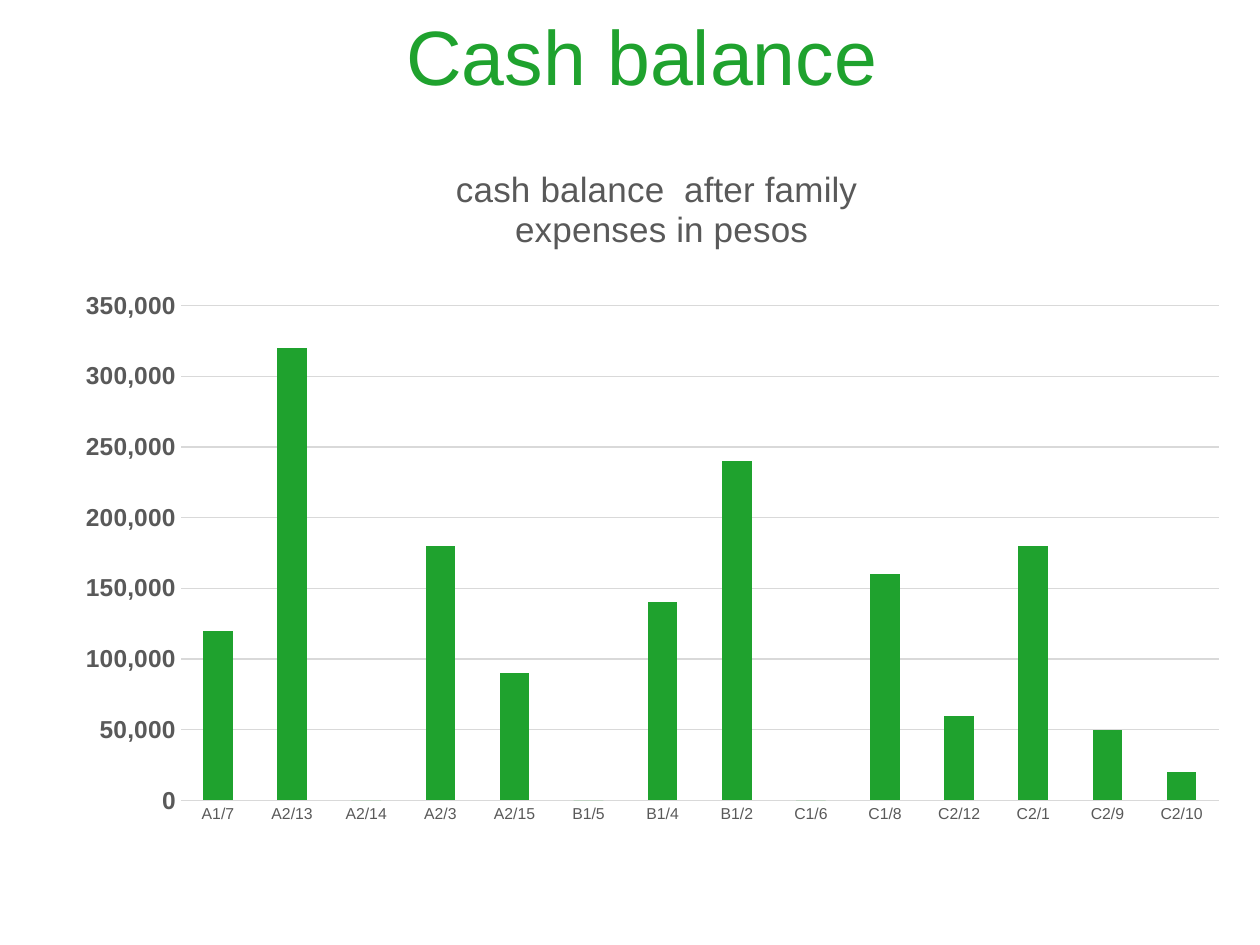
import pptx
import pptx.chart.data
import pptx.dml.color
import pptx.enum.chart
import pptx.enum.text
import pptx.oxml
import pptx.oxml.ns
import pptx.util
from pptx.util import Inches

COLORS = {"green": "1FA22E", "gray": "595959", "grid": "D9D9D9", "black": "000000"}
BALANCES = {
    "A1/7": 120000, "A2/13": 320000, "A2/14": 0, "A2/3": 180000,
    "A2/15": 90000, "B1/5": 0, "B1/4": 140000, "B1/2": 240000,
    "C1/6": 0, "C1/8": 160000, "C2/12": 60000, "C2/1": 180000,
    "C2/9": 50000, "C2/10": 20000,
}


def color(name):
    return pptx.dml.color.RGBColor.from_string(COLORS[name])


def set_values(target, values):
    for name, value in values.items():
        setattr(target, name, value)


def style_font(font, size, color_name, bold=False):
    set_values(font, {"name": "Arial", "size": pptx.util.Pt(size), "bold": bold})
    font.color.rgb = color(color_name)


def place_part(part, index, **fractions):
    for layout in part.findall(pptx.oxml.ns.qn("c:layout")):
        part.remove(layout)
    modes = {"xMode": "edge", "yMode": "edge"}
    if "w" in fractions:
        modes = {"layoutTarget": "inner", **modes}
    settings = "".join(f'<c:{key} val="{value}"/>' for key, value in {**modes, **fractions}.items())
    namespace = pptx.oxml.ns.nsdecls("c")
    part.insert(index, pptx.oxml.parse_xml(
        f"<c:layout {namespace}><c:manualLayout>{settings}</c:manualLayout></c:layout>"))


def add_title(page, text):
    title = page.shapes.title
    set_values(title, {"left": Inches(0.68), "top": Inches(-0.19),
                       "width": Inches(9), "height": Inches(1.25)})
    frame = title.text_frame
    frame.text = text
    frame.vertical_anchor = pptx.enum.text.MSO_ANCHOR.MIDDLE
    para = frame.paragraphs[0]
    para.alignment = pptx.enum.text.PP_ALIGN.CENTER
    style_font(para.runs[0].font, 44, "green")


def style_axis(axis, size, bold):
    none = pptx.enum.chart.XL_TICK_MARK.NONE
    set_values(axis, {"major_tick_mark": none, "minor_tick_mark": none})
    axis.format.line.fill.background()
    style_font(axis.tick_labels.font, size, "gray", bold)


def style_value_axis(axis):
    style_axis(axis, 14, True)
    set_values(axis, {"minimum_scale": 0, "maximum_scale": 350000,
                      "major_unit": 50000, "has_major_gridlines": True})
    set_values(axis.tick_labels, {"number_format": "#,##0", "number_format_is_linked": False})
    line = axis.major_gridlines.format.line
    line.color.rgb = color("grid")
    line.width = pptx.util.Pt(0.75)


def add_chart_title(chart, lines):
    chart.has_title = True
    frame = chart.chart_title.text_frame
    for index, text in enumerate(lines):
        para = frame.add_paragraph() if index else frame.paragraphs[0]
        para.alignment = pptx.enum.text.PP_ALIGN.CENTER
        span = para.add_run()
        span.text = text
        style_font(span.font, 20, "gray")
    chart.chart_title.include_in_layout = False


def add_balance_chart(page):
    data = pptx.chart.data.CategoryChartData(number_format="#,##0")
    data.categories = list(BALANCES)
    data.add_series("Series 1", list(BALANCES.values()))
    chart = page.shapes.add_chart(
        pptx.enum.chart.XL_CHART_TYPE.COLUMN_CLUSTERED,
        Inches(0.5), Inches(1.31), Inches(9.36), Inches(5.31), data).chart
    chart.has_legend = False
    style_font(chart.font, 10, "black")
    add_chart_title(chart, ["cash balance  after family ", "expenses in pesos"])
    style_axis(chart.category_axis, 9, False)
    style_value_axis(chart.value_axis)
    plot = chart.plots[0]
    set_values(plot, {"gap_width": 150, "vary_by_categories": False})
    series = plot.series[0]
    series.invert_if_negative = False
    series.format.fill.solid()
    series.format.fill.fore_color.rgb = color("green")
    qn = pptx.oxml.ns.qn
    space = chart._chartSpace
    place_part(space.find(".//" + qn("c:plotArea")), 0, x=0.1, y=0.21, w=0.88, h=0.74)
    place_part(space.find(".//" + qn("c:title")), 1, x=0.33, y=0)


def main():
    deck = pptx.Presentation()
    set_values(deck, {"slide_width": Inches(10), "slide_height": Inches(7.5)})
    page = deck.slides.add_slide(deck.slide_layouts[5])
    add_title(page, "Cash balance ")
    add_balance_chart(page)
    deck.save("out.pptx")


if __name__ == "__main__":
    main()
